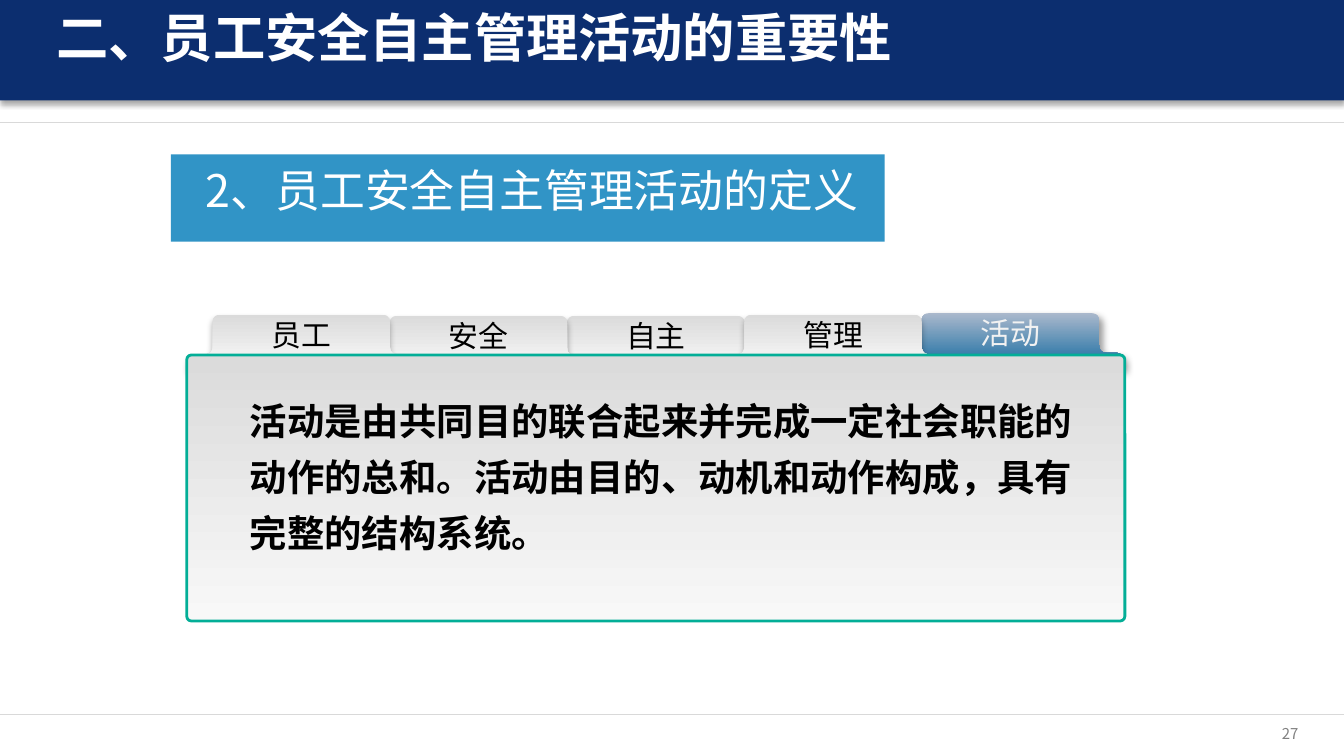
"""Build the slide that defines employee safety self-management activities."""
from dataclasses import dataclass

from lxml import etree
from pptx import Presentation
from pptx.dml.color import RGBColor
from pptx.enum import shapes, text
from pptx.oxml.ns import qn
from pptx.util import Cm, Pt

FONT = "Noto Sans CJK SC"
COLORS = {
    "navy": "0C2E6F",
    "blue": "3194C6",
    "white": "FFFFFF",
    "black": "000000",
    "rule": "D9D9D9",
    "number": "808080",
    "active_text": "F2F2F2",
    "active_top": "AAB8CC",
    "active_bottom": "126AA0",
    "tab_top": "DBDBDB",
    "tab_bottom": "FAFAFA",
    "panel_bottom": "F8F8F8",
    "panel_line": "03AE97",
}
SLIDE_WIDTH, SLIDE_HEIGHT = 25.4, 14.29
TAB_WIDTH, TAB_HEIGHT = 4.27, 1.05
TAB_FOOT, TAB_SHOULDER, TAB_RADIUS = 0.46, 0.75, 0.15
TAB_LEFT, TAB_PITCH = 3.56, 3.35
LABEL_HEIGHT = 0.76


@dataclass(frozen=True)
class Box:
    left: float
    top: float
    width: float
    height: float

    def lengths(self) -> tuple:
        return Cm(self.left), Cm(self.top), Cm(self.width), Cm(self.height)


@dataclass(frozen=True)
class Style:
    size: float
    color: str
    bold: bool = False
    align: text.PP_ALIGN = text.PP_ALIGN.LEFT
    anchor: text.MSO_ANCHOR = text.MSO_ANCHOR.TOP
    spacing: float = 0.9
    inset: float = 0


@dataclass(frozen=True)
class Shadow:
    alpha: int
    blur: float
    distance: float
    angle: int


@dataclass(frozen=True)
class Tab:
    label: str
    column: int
    top: float
    active: bool = False

    @property
    def left(self) -> float:
        return TAB_LEFT + self.column * TAB_PITCH


TABS = [
    Tab("活动", 4, 5.92, active=True),
    Tab("自主", 2, 5.97),
    Tab("安全", 1, 5.97),
    Tab("员工", 0, 5.95),
    Tab("管理", 3, 5.95),
]
BAND_SHADOW = Shadow(35, 3, 1.8, 90)
TAB_SHADOW = Shadow(32, 3.5, 2.2, 90)
ACTIVE_SHADOW = Shadow(40, 4, 3, 45)


def rgb(name: str) -> RGBColor:
    return RGBColor.from_string(COLORS[name])


def add_shadow(shape, shadow: Shadow) -> None:
    effects = shape._element.spPr.find(qn("a:effectLst"))
    outer = etree.SubElement(
        effects, qn("a:outerShdw"), blurRad=str(Pt(shadow.blur)), dist=str(Pt(shadow.distance)),
        dir=str(shadow.angle * 60000), algn="ctr", rotWithShape="0")
    color = etree.SubElement(outer, qn("a:srgbClr"), val=COLORS["black"])
    etree.SubElement(color, qn("a:alpha"), val=str(shadow.alpha * 1000))


def fill_gradient(shape, top: str, bottom: str) -> None:
    shape.fill.gradient()
    shape.fill.gradient_angle = 270
    for stop, name in zip(shape.fill.gradient_stops, (top, bottom)):
        stop.color.rgb = rgb(name)


def add_bar(slide, box: Box, color: str):
    shape = slide.shapes.add_shape(shapes.MSO_SHAPE.RECTANGLE, *box.lengths())
    shape.shadow.inherit = False
    shape.fill.solid()
    shape.fill.fore_color.rgb = rgb(color)
    shape.line.fill.background()
    return shape


def add_rule(slide, top: float) -> None:
    rule = slide.shapes.add_connector(
        shapes.MSO_CONNECTOR.STRAIGHT, 0, Cm(top), Cm(SLIDE_WIDTH), Cm(top))
    rule.line.color.rgb = rgb("rule")
    rule.line.width = Pt(0.25)
    etree.SubElement(rule._element.spPr, qn("a:effectLst"))


def add_text(slide, box: Box, content: str, style: Style) -> None:
    frame = slide.shapes.add_textbox(*box.lengths()).text_frame
    frame.word_wrap = True
    frame.vertical_anchor = style.anchor
    frame.margin_left = frame.margin_right = Cm(style.inset)
    frame.margin_top = frame.margin_bottom = Cm(style.inset)
    paragraph = frame.paragraphs[0]
    paragraph.text = content
    paragraph.alignment = style.align
    paragraph.line_spacing = style.spacing
    font = paragraph.font
    font.size, font.bold, font.name = Pt(style.size), style.bold, FONT
    font.color.rgb = rgb(style.color)
    properties = paragraph._p.pPr.find(qn("a:defRPr"))
    etree.SubElement(properties, qn("a:ea"), typeface=FONT)


def toward(start: tuple, end: tuple, distance: float) -> tuple:
    length = abs(end[0] - start[0]) + abs(end[1] - start[1])
    return tuple(a + (b - a) * distance / length for a, b in zip(start, end))


def round_corner(before: tuple, corner: tuple, after: tuple, steps: int = 6) -> list[tuple]:
    start, end = (toward(corner, point, TAB_RADIUS) for point in (before, after))
    ratios = [step / steps for step in range(steps + 1)]
    return [tuple((1 - t) ** 2 * a + 2 * t * (1 - t) * b + t * t * c
                  for a, b, c in zip(start, corner, end)) for t in ratios]


def tab_outline() -> list[tuple]:
    half = [(0, TAB_HEIGHT), (0, TAB_SHOULDER), (TAB_FOOT, TAB_SHOULDER), (TAB_FOOT, 0)]
    corners = half + [(TAB_WIDTH - x, y) for x, y in reversed(half)]
    points = [corners[0]]
    for before, corner, after in zip(corners, corners[1:], corners[2:]):
        points += round_corner(before, corner, after)
    return points + [corners[-1]]


def add_tab(slide, tab: Tab) -> None:
    points = [(Cm(tab.left + x), Cm(tab.top + y)) for x, y in tab_outline()]
    builder = slide.shapes.build_freeform(*points[0])
    builder.add_line_segments(points[1:], close=True)
    shape = builder.convert_to_shape()
    shape.shadow.inherit = False
    shape.line.fill.background()
    prefix = "active" if tab.active else "tab"
    fill_gradient(shape, f"{prefix}_top", f"{prefix}_bottom")
    add_shadow(shape, ACTIVE_SHADOW if tab.active else TAB_SHADOW)


def add_tab_label(slide, tab: Tab) -> None:
    box = Box(tab.left + TAB_FOOT, tab.top + 0.03, TAB_WIDTH - 2 * TAB_FOOT, LABEL_HEIGHT)
    color = "active_text" if tab.active else "black"
    add_text(slide, box, tab.label,
             Style(16, color, align=text.PP_ALIGN.CENTER, anchor=text.MSO_ANCHOR.MIDDLE))


def add_panel(slide) -> None:
    panel = slide.shapes.add_shape(
        shapes.MSO_SHAPE.ROUNDED_RECTANGLE, *Box(3.53, 6.71, 17.73, 5.03).lengths())
    panel.adjustments[0] = 0.018
    panel.shadow.inherit = False
    fill_gradient(panel, "tab_top", "panel_bottom")
    panel.line.color.rgb = rgb("panel_line")
    panel.line.width = Pt(1.5)


def main() -> None:
    presentation = Presentation()
    presentation.slide_width, presentation.slide_height = Cm(SLIDE_WIDTH), Cm(SLIDE_HEIGHT)
    slide = presentation.slides.add_slide(presentation.slide_layouts[6])
    for top in (2.31, 13.51):
        add_rule(slide, top)
    add_shadow(add_bar(slide, Box(0, -0.13, SLIDE_WIDTH, 2.03), "navy"), BAND_SHADOW)
    add_text(slide, Box(1.07, 0.23, 21.69, 1.19), "二、员工安全自主管理活动的重要性",
             Style(28, "white", bold=True))
    add_text(slide, Box(23.5, 13.69, 1.04, 0.36), "27",
             Style(8, "number", align=text.PP_ALIGN.RIGHT, anchor=text.MSO_ANCHOR.MIDDLE, spacing=1))
    add_bar(slide, Box(3.23, 2.92, 13.49, 1.65), "blue")
    add_text(slide, Box(3.76, 3.07, 12.95, 1.35), "2、员工安全自主管理活动的定义",
             Style(24, "white", inset=0.13))
    for tab in TABS:
        add_tab(slide, tab)
    add_panel(slide)
    for tab in TABS:
        add_tab_label(slide, tab)
    add_text(slide, Box(4.72, 7.32, 16.03, 2.54),
             "活动是由共同目的联合起来并完成一定社会职能的动作的总和。"
             "活动由目的、动机和动作构成，具有完整的结构系统。",
             Style(20, "black", bold=True, spacing=1.25))
    presentation.save("out.pptx")


if __name__ == "__main__":
    main()
